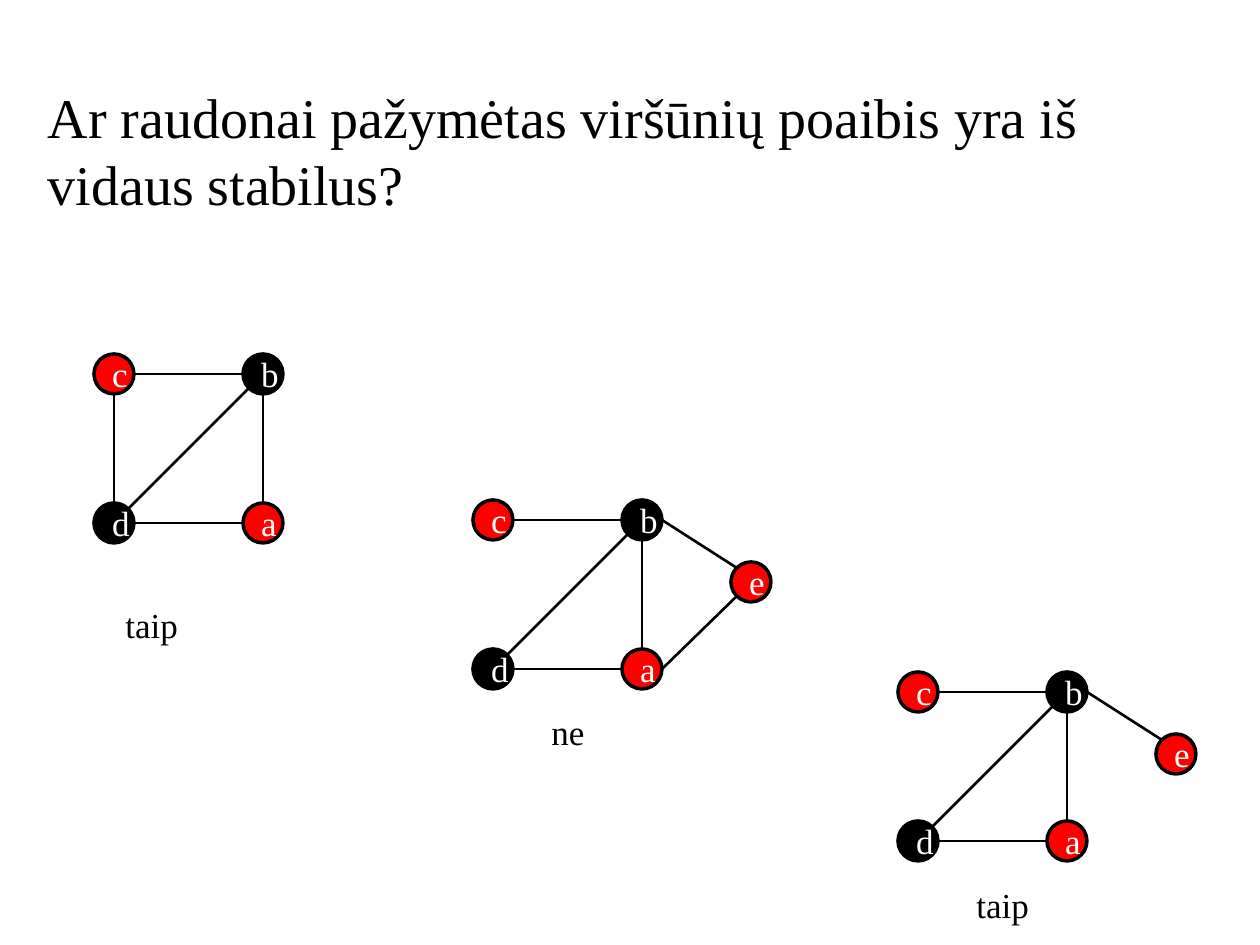
from lxml.etree import SubElement
from pptx import Presentation
from pptx.dml.color import RGBColor
from pptx.enum.shapes import MSO_CONNECTOR, MSO_SHAPE
from pptx.enum.text import MSO_ANCHOR, MSO_AUTO_SIZE, PP_ALIGN
from pptx.oxml.ns import qn
from pptx.util import Emu, Pt

COLORS = {"ink": "000000", "marked": "FF0000", "letter": "FFFFFF"}
FONT = "Times New Roman"
DIAMETER = 40
SIDE = 149

# Vertex positions inside a graph, and the vertices in the red subset
VERTICES = {"c": (0, 0), "b": (SIDE, 0), "d": (0, SIDE), "a": (SIDE, SIDE), "e": (258, 62)}
MARKED = "ace"

# Points on a vertex's rim, in radii from its centre
RIM = {"top": (0, -1), "bottom": (0, 1), "left": (-1, 0), "right": (1, 0),
       "top left": (-0.71, -0.71), "top right": (0.71, -0.71),
       "bottom left": (-0.71, 0.71)}

# Each edge leaves and meets its vertices at fixed rim points
EDGES = {"cb": ("right", "left"), "da": ("right", "left"),
         "db": ("top right", "bottom left"), "ba": ("bottom", "top"),
         "dc": ("top", "bottom"), "eb": ("top left", "right"),
         "ae": ("right", "bottom left")}

# Origin, vertices, edges, answer and the answer's position
GRAPHS = [
    ((94, 354), "cbda", ["cb", "da", "db", "ba", "dc"], "taip", (113, 597)),
    ((898, 672), "cbdae", ["cb", "da", "db", "ba", "eb"], "taip", (964, 877)),
    ((473, 500), "cbdae", ["cb", "da", "db", "ba", "eb", "ae"], "ne", (539, 704)),
]


def px(length):
    return Emu(round(length * 914400 / 126))


def color(name):
    return RGBColor.from_string(COLORS[name])


class GraphSlide:
    """Holds the slide and draws its elements in one style."""

    def __init__(self, slide):
        self.slide = slide

    def set_text(self, frame, text, size, ink="ink", align=PP_ALIGN.LEFT,
                 anchor=MSO_ANCHOR.TOP):
        frame.text = text
        frame.word_wrap = True
        frame.vertical_anchor = anchor
        paragraph = frame.paragraphs[0]
        paragraph.alignment = align
        paragraph.font.name = FONT
        paragraph.font.size = Pt(size)
        paragraph.font.color.rgb = color(ink)

    def title(self, text, left, top, width, height):
        title = self.slide.shapes.title
        title.left, title.top, title.width, title.height = map(px, (left, top, width, height))
        self.set_text(title.text_frame, text, 32)
        title.text_frame.auto_size = MSO_AUTO_SIZE.NONE

    def answer(self, text, left, top):
        box = self.slide.shapes.add_textbox(px(left), px(top), px(159), px(55))
        self.set_text(box.text_frame, text, 20)

    def vertex(self, group, letter, left, top):
        circle = group.shapes.add_shape(MSO_SHAPE.OVAL, px(left), px(top),
                                        px(DIAMETER), px(DIAMETER))
        circle.shadow.inherit = False
        circle.fill.solid()
        circle.fill.fore_color.rgb = color("marked" if letter in MARKED else "ink")
        circle.line.color.rgb = color("ink")
        circle.line.width = Pt(2)
        self.set_text(circle.text_frame, letter, 20, "letter",
                      PP_ALIGN.CENTER, MSO_ANCHOR.MIDDLE)

    def edge(self, group, start, end):
        line = group.shapes.add_connector(MSO_CONNECTOR.STRAIGHT, *map(px, start + end))
        line.line.color.rgb = color("ink")
        line.line.width = Pt(1.5)
        SubElement(line._element.spPr, qn("a:effectLst"))

    def graph(self, origin, letters, edges):
        group = self.slide.shapes.add_group_shape()
        corners = {letter: (origin[0] + VERTICES[letter][0], origin[1] + VERTICES[letter][1])
                   for letter in letters}
        for letter, corner in corners.items():
            self.vertex(group, letter, *corner)
        for ends in edges:
            start, end = (rim_point(corners[letter], side)
                          for letter, side in zip(ends, EDGES[ends]))
            self.edge(group, start, end)


def rim_point(corner, side):
    radius = DIAMETER / 2
    return tuple(round(c + radius * (1 + r)) for c, r in zip(corner, RIM[side]))


def main():
    deck = Presentation()
    deck.slide_width, deck.slide_height = px(1260), px(945)
    page = GraphSlide(deck.slides.add_slide(deck.slide_layouts[5]))
    page.title("Ar raudonai pažymėtas viršūnių poaibis yra iš vidaus stabilus?",
               35, 76, 1201, 149)
    for origin, letters, edges, answer, place in GRAPHS:
        page.graph(origin, letters, edges)
        page.answer(answer, *place)
    deck.save("out.pptx")


if __name__ == "__main__":
    main()
